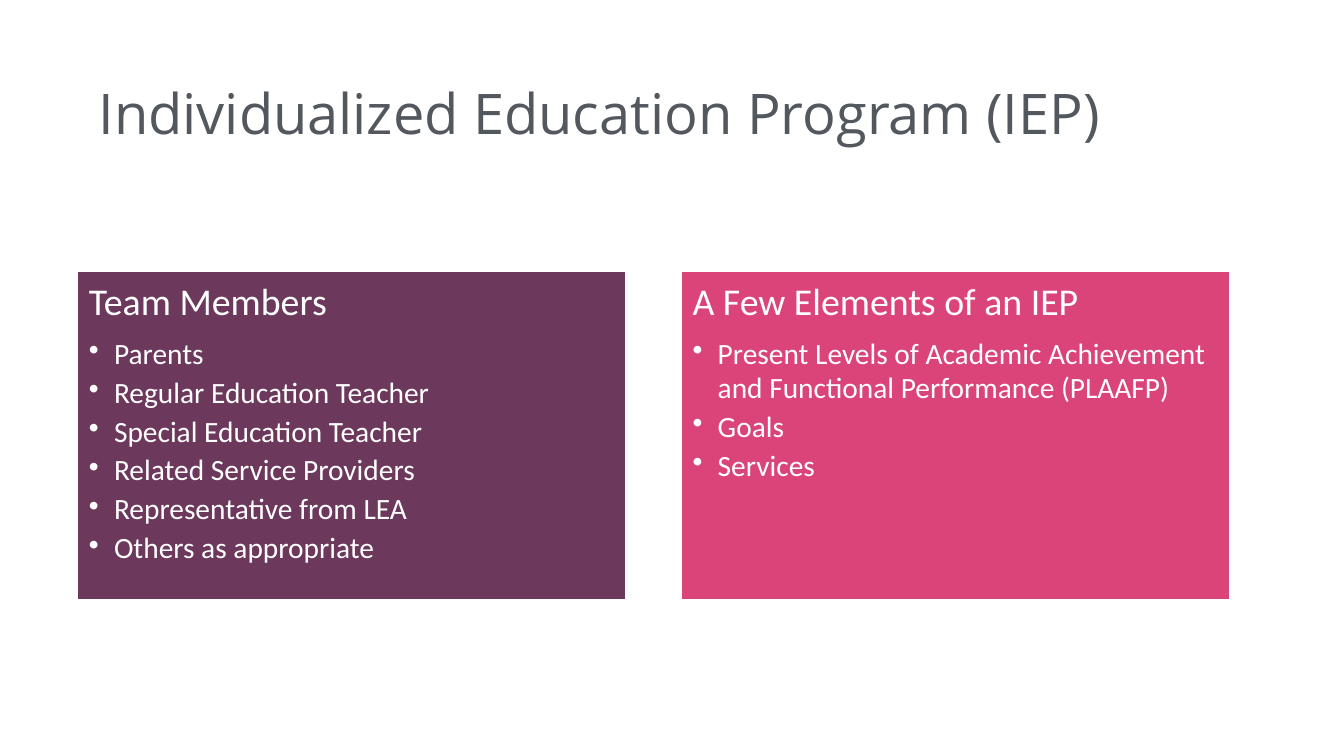
from lxml import etree
from pptx import Presentation
from pptx.dml.color import RGBColor
from pptx.enum.shapes import MSO_SHAPE as Preset
from pptx.enum.text import MSO_ANCHOR as Anchor, PP_ALIGN as Align
from pptx.oxml.ns import qn
from pptx.util import Pt

# Content
WHITE = RGBColor(0xFF, 0xFF, 0xFF)
GRAY = RGBColor(0x53, 0x58, 0x5F)
PLUM = RGBColor(0x6C, 0x38, 0x5C)
PINK = RGBColor(0xDB, 0x44, 0x78)

TITLE = "Individualized Education Program (IEP)"
CARDS = [
    ("Team Members", PLUM, [
        "Parents",
        "Regular Education Teacher",
        "Special Education Teacher",
        "Related Service Providers",
        "Representative from LEA",
        "Others as appropriate",
    ]),
    ("A Few Elements of an IEP", PINK, [
        "Present Levels of Academic Achievement and Functional Performance (PLAAFP)",
        "Goals",
        "Services",
    ]),
]

# Card layout, in points
CARD_LEFT, CARD_TOP = 55.5, 193.7
CARD_WIDTH, CARD_HEIGHT = 391.7, 234.7
CARD_STEP = 431.2
INSET = 8
INDENT = 18


def add_bullet(para):
    props = para._p.get_or_add_pPr()
    props.set("marL", str(Pt(INDENT)))
    props.set("indent", str(-Pt(INDENT)))
    etree.SubElement(props, qn("a:buChar")).set("char", "•")


def style(para, font, size, color, spacing, after=0):
    para.alignment = Align.LEFT
    para.line_spacing = spacing
    para.space_before = Pt(0)
    para.space_after = Pt(after)
    for span in para.runs:
        span.font.name = font
        span.font.size = Pt(size)
        span.font.color.rgb = color


def add_card(page, left, heading, fill, items):
    card = page.shapes.add_shape(Preset.RECTANGLE, Pt(left), Pt(CARD_TOP),
                                 Pt(CARD_WIDTH), Pt(CARD_HEIGHT))
    card.shadow.inherit = False
    card.fill.solid()
    card.fill.fore_color.rgb = fill
    card.line.color.rgb = WHITE
    card.line.width = Pt(1)

    frame = card.text_frame
    frame.word_wrap = True
    frame.vertical_anchor = Anchor.TOP
    frame.margin_left = frame.margin_right = Pt(INSET)
    frame.margin_top = frame.margin_bottom = Pt(INSET)
    frame.text = heading
    style(frame.paragraphs[0], "Calibri", 27, WHITE, 0.9, 9.45)
    for item in items:
        para = frame.add_paragraph()
        para.text = item
        add_bullet(para)
        style(para, "Calibri", 21, WHITE, 0.98, 3.15)


def main():
    deck = Presentation()
    deck.slide_width, deck.slide_height = Pt(960), Pt(540)
    page = deck.slides.add_slide(deck.slide_layouts[6])

    # Title
    box = page.shapes.add_textbox(Pt(63.4), Pt(36), Pt(833), Pt(93.6))
    frame = box.text_frame
    frame.word_wrap = True
    frame.vertical_anchor = Anchor.MIDDLE
    frame.text = TITLE
    style(frame.paragraphs[0], "Open Sans", 40, GRAY, 0.9)

    # Cards side by side
    for index, (heading, fill, items) in enumerate(CARDS):
        add_card(page, CARD_LEFT + index * CARD_STEP, heading, fill, items)

    deck.save("out.pptx")


if __name__ == "__main__":
    main()
